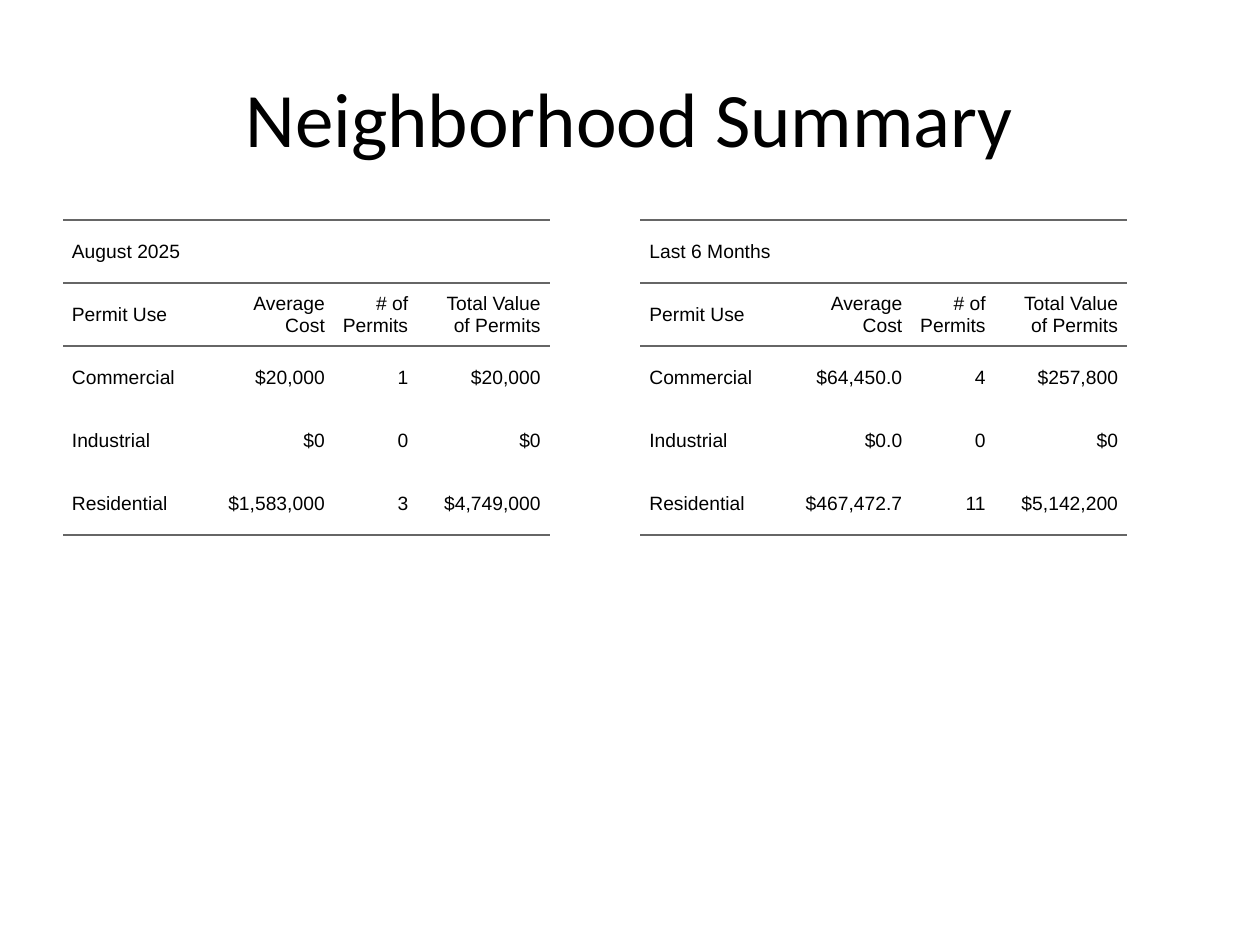
from pptx import Presentation
from pptx.dml.color import RGBColor
from pptx.enum.text import MSO_ANCHOR, PP_ALIGN
from pptx.oxml.ns import qn
from pptx.util import Cm, Pt
from lxml.etree import SubElement

COLORS = {"text": "000000", "rule": "666666"}
COLUMN_WIDTHS = [Cm(2.79), Cm(2.67), Cm(1.68), Cm(2.67)]
ROW_HEIGHT = Cm(1.27)
PADDING = Cm(0.18)
NO_GRID_STYLE = "{2D5ABB26-0587-4C30-8999-92F81FD0307C}"
HEADINGS = ["Permit Use", "Average Cost", "# of Permits", "Total Value of Permits"]
AUGUST = [
    ["Commercial", "$20,000", "1", "$20,000"],
    ["Industrial", "$0", "0", "$0"],
    ["Residential", "$1,583,000", "3", "$4,749,000"],
]
SIX_MONTHS = [
    ["Commercial", "$64,450.0", "4", "$257,800"],
    ["Industrial", "$0.0", "0", "$0"],
    ["Residential", "$467,472.7", "11", "$5,142,200"],
]


def write_text(frame, text, font="Arial", size=11, align=PP_ALIGN.LEFT, spacing=0, margin=0):
    paragraph = frame.paragraphs[0]
    paragraph.alignment = align
    if spacing:
        paragraph.space_before = paragraph.space_after = Pt(spacing)
    if margin:
        properties = paragraph._p.get_or_add_pPr()
        for name, value in (("marL", margin), ("marR", margin), ("indent", 0)):
            properties.set(name, str(value))
    run = paragraph.add_run()
    run.text = text
    run.font.name = font
    run.font.size = Pt(size)
    run.font.color.rgb = RGBColor.from_string(COLORS["text"])


def add_rule(cell, side):
    line = SubElement(cell._tc.get_or_add_tcPr(), qn(f"a:ln{side}"), w=str(Pt(1.5)))
    fill = SubElement(line, qn("a:solidFill"))
    SubElement(fill, qn("a:srgbClr"), val=COLORS["rule"])


def format_cell(cell, row, last_row):
    cell.margin_left = cell.margin_right = 0
    cell.margin_top = cell.margin_bottom = PADDING
    cell.vertical_anchor = MSO_ANCHOR.MIDDLE
    if row < 2:
        add_rule(cell, "T")
    if row < 2 or row == last_row:
        add_rule(cell, "B")
    cell.fill.background()


def add_permit_table(slide, left, period, records):
    rows = [[period], HEADINGS, *records]
    frame = slide.shapes.add_table(
        len(rows), len(HEADINGS), left, Cm(4.44), sum(COLUMN_WIDTHS), ROW_HEIGHT * len(rows)
    )
    table = frame.table
    table.first_row = table.horz_banding = False
    table._tbl.tblPr.find(qn("a:tableStyleId")).text = NO_GRID_STYLE
    for column, width in zip(table.columns, COLUMN_WIDTHS):
        column.width = width
    table.cell(0, 0).merge(table.cell(0, len(HEADINGS) - 1))
    for row in range(len(rows)):
        table.rows[row].height = ROW_HEIGHT
        for column in range(len(HEADINGS)):
            format_cell(table.cell(row, column), row, len(rows) - 1)
        for column, text in enumerate(rows[row]):
            align = PP_ALIGN.RIGHT if column else PP_ALIGN.LEFT
            write_text(table.cell(row, column).text_frame, text,
                       align=align, spacing=5, margin=PADDING)
    frame.width, frame.height = Cm(11.22), Cm(12.57)


def add_title(slide, text):
    title = slide.shapes.title
    title.left, title.top, title.width, title.height = Cm(1.27), Cm(0.76), Cm(22.86), Cm(3.18)
    title.text_frame.vertical_anchor = MSO_ANCHOR.MIDDLE
    write_text(title.text_frame, text, font="Calibri", size=44, align=PP_ALIGN.CENTER)


def main():
    presentation = Presentation()
    presentation.slide_width, presentation.slide_height = Cm(25.4), Cm(19.05)
    slide = presentation.slides.add_slide(presentation.slide_layouts[5])
    add_title(slide, "Neighborhood Summary")
    add_permit_table(slide, Cm(1.27), "August 2025", AUGUST)
    add_permit_table(slide, Cm(12.91), "Last 6 Months", SIX_MONTHS)
    presentation.save("out.pptx")


if __name__ == "__main__":
    main()
